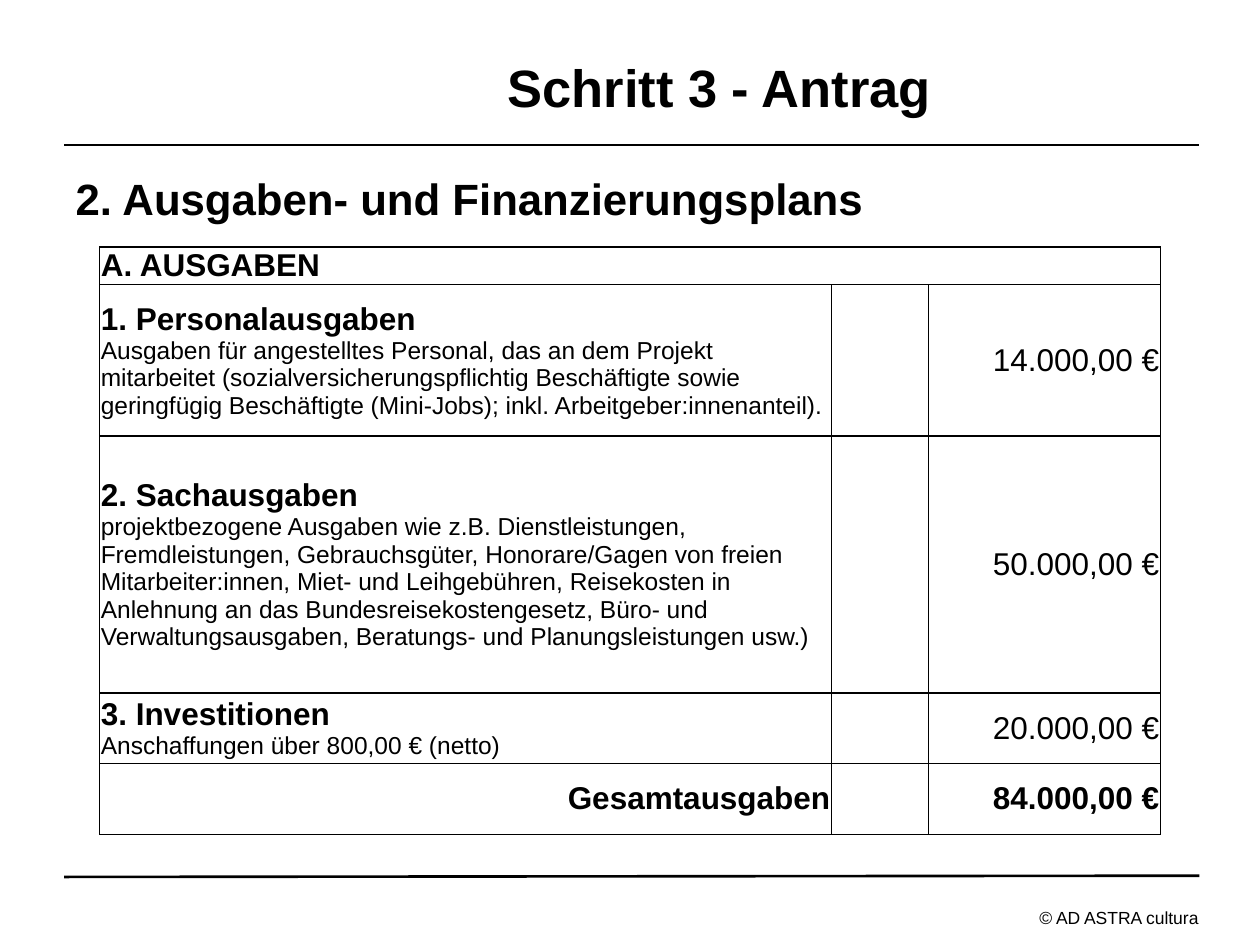
from lxml import etree
from pptx import Presentation
from pptx import util as u
from pptx.dml.color import RGBColor
from pptx.enum import shapes, text
from pptx.oxml.ns import qn

COLORS = {"ink": "000000", "paper": "FFFFFF"}
FONT = "Arial"
LEFT, RIGHT = text.PP_ALIGN.LEFT, text.PP_ALIGN.RIGHT
CENTER = text.PP_ALIGN.CENTER

COLUMNS = [5.81, 0.77, 1.84]
ROWS = [0.28, 1.2, 2.04, 0.56, 0.56]
EXPENSES = [
    ("1. Personalausgaben",
     "Ausgaben für angestelltes Personal, das an dem Projekt mitarbeitet "
     "(sozialversicherungspflichtig Beschäftigte sowie geringfügig "
     "Beschäftigte (Mini-Jobs); inkl. Arbeitgeber:innenanteil).",
     "14.000,00 €"),
    ("2. Sachausgaben",
     "projektbezogene Ausgaben wie z.B. Dienstleistungen, Fremdleistungen, "
     "Gebrauchsgüter, Honorare/Gagen von freien Mitarbeiter:innen, Miet- und "
     "Leihgebühren, Reisekosten in Anlehnung an das Bundesreisekostengesetz, "
     "Büro- und Verwaltungsausgaben, Beratungs- und Planungsleistungen usw.)",
     "50.000,00 €"),
    ("3. Investitionen", "Anschaffungen über 800,00 € (netto)", "20.000,00 €"),
]


def write(p, content, size=18, bold=False, align=LEFT, color="ink"):
    p.alignment = align
    r = p.add_run()
    r.text = content
    r.font.name = FONT
    r.font.size = u.Pt(size)
    r.font.bold = bold
    r.font.color.rgb = RGBColor.from_string(COLORS[color])


def place(sp, left, top, width, height):
    sp.left, sp.top = u.Inches(left), u.Inches(top)
    sp.width, sp.height = u.Inches(width), u.Inches(height)


def add_rule(s, y1, y2):
    line = s.shapes.add_connector(
        shapes.MSO_CONNECTOR.STRAIGHT,
        u.Inches(0.51), u.Inches(y1), u.Inches(9.52), u.Inches(y2))
    line.line.color.rgb = RGBColor.from_string(COLORS["ink"])
    line.line.width = u.Pt(1.5)
    etree.SubElement(line._element.spPr, qn("a:effectLst"))


def add_title(s):
    sp = s.shapes.title
    place(sp, 1.92, 0.06, 7.58, 1.25)
    tf = sp.text_frame
    tf.auto_size = text.MSO_AUTO_SIZE.NONE
    tf.vertical_anchor = text.MSO_ANCHOR.MIDDLE
    write(tf.paragraphs[0], "Schritt 3 - Antrag", size=30, bold=True, align=CENTER)


def add_heading(s):
    sp = s.placeholders[1]
    place(sp, 0.5, 1.31, 9, 5.39)
    tf = sp.text_frame
    tf.auto_size = text.MSO_AUTO_SIZE.NONE
    p = tf.paragraphs[0]
    # Hanging indent without a bullet
    pPr = p._p.get_or_add_pPr()
    pPr.set("marL", str(u.Inches(0.38)))
    pPr.set("indent", str(-u.Inches(0.38)))
    etree.SubElement(pPr, qn("a:buNone"))
    p.space_before, p.space_after = u.Pt(0), u.Pt(10.5)
    write(p, "2. Ausgaben- und Finanzierungsplans", size=25, bold=True)


def add_footer(s):
    sp = s.shapes.add_textbox(
        u.Inches(8.15), u.Inches(7.15), u.Inches(1.51), u.Inches(0.27))
    tf = sp.text_frame
    tf.word_wrap = False
    write(tf.paragraphs[0], "© AD ASTRA cultura", size=10)


def style_cell(cell):
    cell.margin_left = cell.margin_right = u.Inches(0.01)
    cell.margin_top = cell.margin_bottom = 0
    cell.vertical_anchor = text.MSO_ANCHOR.MIDDLE
    tcPr = cell._tc.get_or_add_tcPr()
    for side in ("lnL", "lnR", "lnT", "lnB"):
        ln = etree.SubElement(tcPr, qn(f"a:{side}"), w=str(u.Pt(0.75)))
        fill = etree.SubElement(ln, qn("a:solidFill"))
        etree.SubElement(fill, qn("a:srgbClr"), val=COLORS["ink"])
    cell.fill.solid()
    cell.fill.fore_color.rgb = RGBColor.from_string(COLORS["paper"])


def add_budget(s):
    frame = s.shapes.add_table(
        len(ROWS), len(COLUMNS), u.Inches(0.79), u.Inches(1.96),
        u.Inches(sum(COLUMNS)), u.Inches(sum(ROWS)))
    table = frame.table
    table.first_row = table.horz_banding = False
    for column, width in zip(table.columns, COLUMNS):
        column.width = u.Inches(width)
    for row, height in zip(table.rows, ROWS):
        row.height = u.Inches(height)
    for cell in table.iter_cells():
        style_cell(cell)

    def first(row, col):
        return table.cell(row, col).text_frame.paragraphs[0]

    # Header across all columns
    table.cell(0, 0).merge(table.cell(0, 2))
    write(first(0, 0), "A. AUSGABEN", bold=True)
    # Kinds of expense
    for row, (name, details, amount) in enumerate(EXPENSES, start=1):
        write(first(row, 0), name, bold=True)
        write(table.cell(row, 0).text_frame.add_paragraph(), details, size=14)
        write(first(row, 2), amount, align=RIGHT)
    # Total
    total = len(ROWS) - 1
    write(first(total, 0), "Gesamtausgaben", bold=True, align=RIGHT)
    write(first(total, 2), "84.000,00 €", bold=True, align=RIGHT)


def main():
    prs = Presentation()
    prs.slide_width, prs.slide_height = u.Inches(10), u.Inches(7.5)
    s = prs.slides.add_slide(prs.slide_layouts[1])
    # Frame of the page
    add_rule(s, 1.15, 1.15)
    add_rule(s, 6.96, 6.95)
    add_footer(s)
    # Content
    add_title(s)
    add_heading(s)
    add_budget(s)
    prs.save("out.pptx")


if __name__ == "__main__":
    main()
